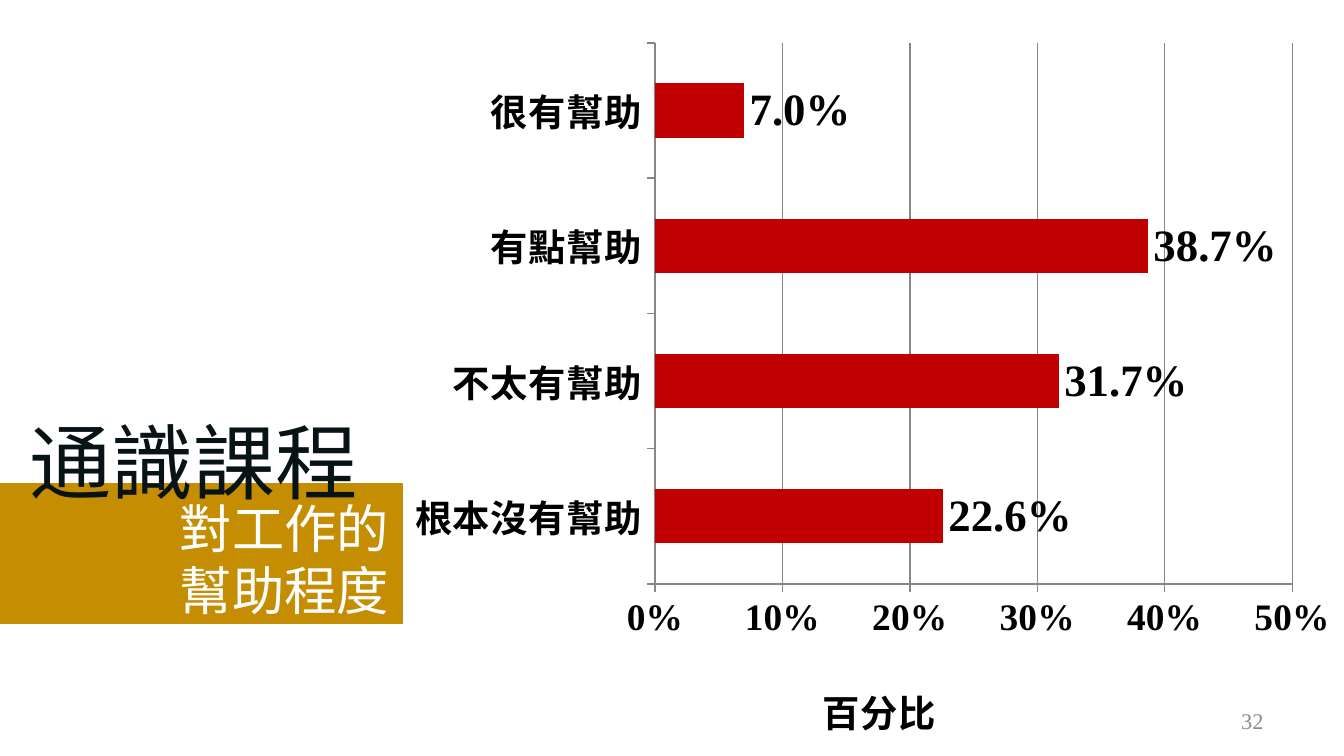
import dataclasses
import typing

import lxml.etree
import pptx
import pptx.chart.data
import pptx.dml.color
import pptx.enum.chart
import pptx.enum.shapes
import pptx.enum.text
import pptx.oxml.ns
import pptx.util

Pt = pptx.util.Pt
Align = pptx.enum.text.PP_ALIGN
Anchor = pptx.enum.text.MSO_ANCHOR


@dataclasses.dataclass(frozen=True)
class Theme:
    bar: str = "C00000"
    band: str = "C58D01"
    white: str = "FFFFFF"
    black: str = "000000"
    title: str = "081316"
    grey: str = "8C8C8C"
    grid: str = "868686"
    serif: str = "Times New Roman"
    sans: str = "Noto Sans CJK JP"
    big: float = 44
    mid: float = 28
    label: float = 24
    axis: float = 20
    small: float = 12


THEME = Theme()


class Box(typing.NamedTuple):
    left: float
    top: float
    width: float
    height: float


@dataclasses.dataclass(frozen=True)
class Block:
    box: Box
    lines: tuple[str, ...]
    size: float
    color: str
    font: str
    align: Align = Align.LEFT
    anchor: Anchor = Anchor.TOP
    fill: str | None = None
    pitch: float | None = None
    inset: float = 3.6


BLOCKS = (
    Block(Box(516.2, 375.1, 167.8, 21.6), ("32",), THEME.small, THEME.grey,
          THEME.serif, Align.RIGHT, Anchor.MIDDLE),
    Block(Box(0, 259.2, 215.3, 74.9), ("對工作的", "幫助程度"), THEME.mid,
          THEME.white, THEME.sans, Align.RIGHT, fill=THEME.band, pitch=33.5,
          inset=6.6),
    Block(Box(8.6, 213.8, 209.5, 60.5), ("通識課程",), THEME.big, THEME.title,
          THEME.sans, pitch=53, inset=6.6),
)

PLOT = Box(4.875 * 72, 23, 341.3, 289.9)
CHART = Box(212.4, 15.1, 510.5, 388.1)
LEGS = {"根本沒有幫助": 0.226, "不太有幫助": 0.317, "有點幫助": 0.387, "很有幫助": 0.07}


def paint(color: str) -> pptx.dml.color.RGBColor:
    return pptx.dml.color.RGBColor.from_string(color)


def style(font: typing.Any, size: float, color: str, name: str, bold: bool = False) -> None:
    font.size = Pt(size)
    font.color.rgb = paint(color)
    font.name = name
    font.bold = bold


def write(shapes: typing.Any, block: Block) -> None:
    area = [Pt(n) for n in block.box]
    if block.fill:
        shape = shapes.add_shape(pptx.enum.shapes.MSO_SHAPE.RECTANGLE, *area)
        shape.shadow.inherit = False
        shape.fill.solid()
        shape.fill.fore_color.rgb = paint(block.fill)
        shape.line.color.rgb = paint(block.fill)
        shape.line.width = Pt(0.75)
    else:
        shape = shapes.add_textbox(*area)
    frame = shape.text_frame
    frame.word_wrap = True
    frame.vertical_anchor = block.anchor
    frame.margin_top = Pt(block.inset)
    frame.margin_bottom = Pt(7.2 - block.inset)
    para = frame.paragraphs[0]
    para.alignment = block.align
    if block.pitch:
        para.line_spacing = Pt(block.pitch)
    for index, line in enumerate(block.lines):
        if index:
            para.add_line_break()
        run = para.add_run()
        run.text = line
        style(run.font, block.size, block.color, block.font)
        face = lxml.etree.SubElement(run.font._element, pptx.oxml.ns.qn("a:ea"))
        face.set("typeface", block.font)


def place(parent: typing.Any, index: int, **parts: str | float) -> None:
    qn = pptx.oxml.ns.qn
    for old in parent.findall(qn("c:layout")):
        parent.remove(old)
    layout = lxml.etree.Element(qn("c:layout"))
    manual = lxml.etree.SubElement(layout, qn("c:manualLayout"))
    for name, value in parts.items():
        lxml.etree.SubElement(manual, qn(f"c:{name}")).set("val", str(value))
    parent.insert(index, layout)


def graph(shapes: typing.Any) -> None:
    data = pptx.chart.data.CategoryChartData(number_format="0.0%")
    data.categories = list(LEGS)
    data.add_series("Series 1", list(LEGS.values()))
    kind = pptx.enum.chart.XL_CHART_TYPE.BAR_CLUSTERED
    chart = shapes.add_chart(kind, *[Pt(n) for n in CHART], data).chart
    chart.has_legend = False
    chart.has_title = False
    style(chart.font, THEME.axis, THEME.black, THEME.serif)

    plot = chart.plots[0]
    plot.gap_width = 150
    plot.vary_by_categories = False
    fill = plot.series[0].format.fill
    fill.solid()
    fill.fore_color.rgb = paint(THEME.bar)
    plot.has_data_labels = True
    labels = plot.data_labels
    labels.show_value = True
    labels.number_format = "0.0%"
    labels.number_format_is_linked = False
    labels.position = pptx.enum.chart.XL_LABEL_POSITION.OUTSIDE_END
    style(labels.font, THEME.label, THEME.black, THEME.serif, True)

    scale = chart.value_axis
    for axis in (chart.category_axis, scale):
        axis.major_tick_mark = pptx.enum.chart.XL_TICK_MARK.OUTSIDE
        axis.format.line.color.rgb = paint(THEME.grid)
        axis.format.line.width = Pt(0.75)
        style(axis.tick_labels.font, THEME.axis, THEME.black, THEME.serif, True)
    scale.minimum_scale = 0
    scale.maximum_scale = 0.5
    scale.major_unit = 0.1
    scale.tick_labels.number_format = "0%"
    scale.tick_labels.number_format_is_linked = False
    scale.has_major_gridlines = True
    scale.major_gridlines.format.line.color.rgb = paint(THEME.grid)
    scale.major_gridlines.format.line.width = Pt(0.75)
    run = scale.axis_title.text_frame.paragraphs[0].add_run()
    run.text = "百分比"
    style(run.font, THEME.axis, THEME.black, THEME.serif, True)

    place(scale.axis_title._element, 1, xMode="edge", yMode="edge", x=0.44, y=0.89)
    area = chart._chartSpace.chart.plotArea
    place(area, 0, layoutTarget="inner", xMode="edge", yMode="edge",
          x=round((PLOT.left - CHART.left) / CHART.width, 4),
          y=round((PLOT.top - CHART.top) / CHART.height, 4),
          w=round(PLOT.width / CHART.width, 4),
          h=round(PLOT.height / CHART.height, 4))


def main() -> None:
    """Build the slide on how much general courses help at work."""
    deck = pptx.Presentation()
    deck.slide_width, deck.slide_height = Pt(720), Pt(405)
    slide = deck.slides.add_slide(deck.slide_layouts[6])
    graph(slide.shapes)
    for block in BLOCKS:
        write(slide.shapes, block)
    deck.save("out.pptx")


if __name__ == "__main__":
    main()
